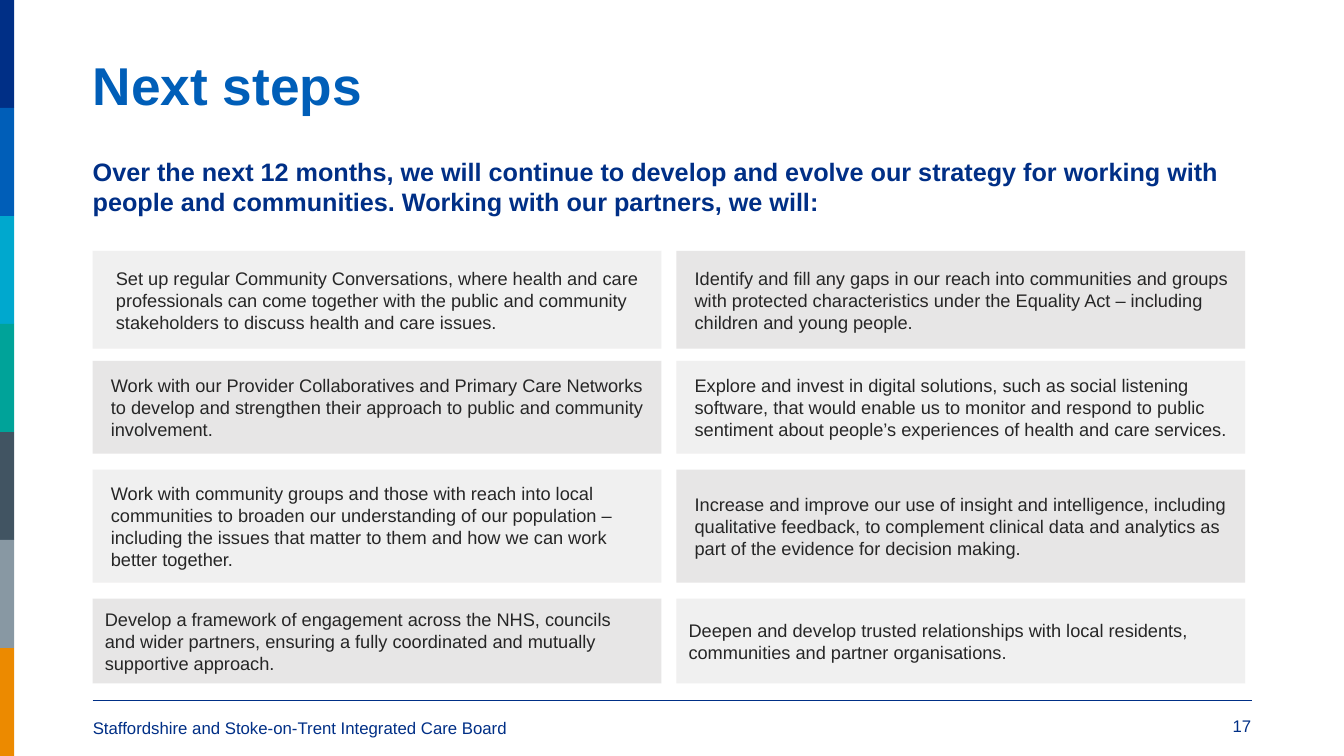
from lxml.etree import SubElement
from pptx import Presentation
from pptx.dml.color import RGBColor
from pptx.enum.shapes import MSO_CONNECTOR, MSO_SHAPE
from pptx.enum.text import MSO_ANCHOR, PP_ALIGN
from pptx.oxml.ns import qn
from pptx.util import Inches, Pt

COLOURS = {
    "navy": "002F86",
    "blue": "005EB8",
    "cyan": "00A8CE",
    "teal": "00A399",
    "slate": "415462",
    "grey": "8898A3",
    "orange": "EC8A00",
    "panel": "E7E6E6",
    "text": "262626",
}
STRIPES = ["navy", "blue", "cyan", "teal", "slate", "grey", "orange"]
LEFT = 0.92
COLUMN_PITCH = 5.79
PANEL_WIDTH = 5.64
PANEL_INSET = 0.12

STEP_ROWS = [
    (2.49, 0.97, [
        (0.23, "Set up regular Community Conversations, where health and care professionals can come together with the public and community stakeholders to discuss health and care issues."),
        (0.18, "Identify and fill any gaps in our reach into communities and groups with protected characteristics under the Equality Act – including children and young people."),
    ]),
    (3.58, 0.92, [
        (0.18, "Work with our Provider Collaboratives and Primary Care Networks to develop and strengthen their approach to public and community involvement."),
        (0.18, "Explore and invest in digital solutions, such as social listening software, that would enable us to monitor and respond to public sentiment about people’s experiences of health and care services."),
    ]),
    (4.66, 1.12, [
        (0.18, "Work with community groups and those with reach into local communities to broaden our understanding of our population – including the issues that matter to them and how we can work better together."),
        (0.18, "Increase and improve our use of insight and intelligence, including qualitative feedback, to complement clinical data and analytics as part of the evidence for decision making."),
    ]),
    (5.94, 0.84, [
        (0.12, "Develop a framework of engagement across the NHS, councils\nand wider partners, ensuring a fully coordinated and mutually supportive approach."),
        (0.12, "Deepen and develop trusted relationships with local residents, communities and partner organisations."),
    ]),
]


def colour(name):
    return RGBColor.from_string(COLOURS[name])


def write_text(frame, text, size=13, ink="text", bold=False, font="Arial",
               align=PP_ALIGN.LEFT, anchor=MSO_ANCHOR.TOP,
               insets=(0, 0, 0, 0), line_spacing=1.0):
    frame.word_wrap = True
    frame.vertical_anchor = anchor
    (frame.margin_left, frame.margin_top,
     frame.margin_right, frame.margin_bottom) = map(Inches, insets)
    para = frame.paragraphs[0]
    para.alignment = align
    para.line_spacing = line_spacing
    for index, line in enumerate(text.split("\n")):
        if index:
            para.add_line_break()
        span = para.add_run()
        span.text = line
        span.font.name = font
        span.font.size = Pt(size)
        span.font.bold = bold
        span.font.color.rgb = colour(ink)


class SlideBuilder:
    def __init__(self, page):
        self.page = page

    def text(self, left, top, width, height, text, **style):
        box = self.page.shapes.add_textbox(*map(Inches, (left, top, width, height)))
        write_text(box.text_frame, text, **style)

    def rectangle(self, left, top, width, height, fill, opacity=100):
        box = self.page.shapes.add_shape(
            MSO_SHAPE.RECTANGLE, *map(Inches, (left, top, width, height)))
        box.shadow.inherit = False
        box.line.fill.background()
        box.fill.solid()
        box.fill.fore_color.rgb = colour(fill)
        if opacity < 100:
            tint = box.fill._xPr.find(qn("a:solidFill"))[0]
            SubElement(tint, qn("a:alpha")).set("val", str(opacity * 1000))
        return box

    def panel(self, left, top, width, height, text, indent, opacity):
        box = self.rectangle(left, top, width, height, "panel", opacity)
        write_text(box.text_frame, text, anchor=MSO_ANCHOR.MIDDLE,
                   insets=(indent, PANEL_INSET, PANEL_INSET, PANEL_INSET))

    def rule(self, left, top, right, ink):
        line = self.page.shapes.add_connector(
            MSO_CONNECTOR.STRAIGHT, *map(Inches, (left, top, right, top)))
        line.line.color.rgb = colour(ink)
        line.line.width = Pt(1)
        SubElement(line._element.spPr, qn("a:effectLst"))


def main():
    deck = Presentation()
    deck.slide_width = Inches(13.33)
    deck.slide_height = Inches(7.5)
    builder = SlideBuilder(deck.slides.add_slide(deck.slide_layouts[6]))

    builder.rule(LEFT, 6.95, 12.42, "navy")
    stripe_height = 7.5 / len(STRIPES)
    for index, name in enumerate(STRIPES):
        builder.rectangle(0, index * stripe_height, 0.14, stripe_height, name)

    builder.text(LEFT, 0.53, 11.5, 0.7, "Next steps", size=38, ink="blue",
                 bold=True, anchor=MSO_ANCHOR.MIDDLE, line_spacing=0.9)
    builder.text(LEFT, 1.57, 11.5, 0.7,
                 "Over the next 12 months, we will continue to develop and evolve our strategy for working with people and communities. Working with our partners, we will:",
                 size=18, ink="navy", bold=True, line_spacing=0.98)

    for row, (top, height, steps) in enumerate(STEP_ROWS):
        for column, (indent, step) in enumerate(steps):
            opacity = 100 if (row + column) % 2 else 60
            builder.panel(LEFT + column * COLUMN_PITCH, top, PANEL_WIDTH, height,
                          step, indent, opacity)

    builder.text(LEFT, 7.07, 8.01, 0.3,
                 "Staffordshire and Stoke-on-Trent Integrated Care Board",
                 size=12, ink="navy", insets=(0, 0.05, 0.1, 0.05))
    builder.text(10.42, 7.05, 1.99, 0.3, "17", size=12, ink="navy",
                 align=PP_ALIGN.RIGHT, insets=(0, 0.05, 0, 0.05))
    deck.save("out.pptx")


if __name__ == "__main__":
    main()
